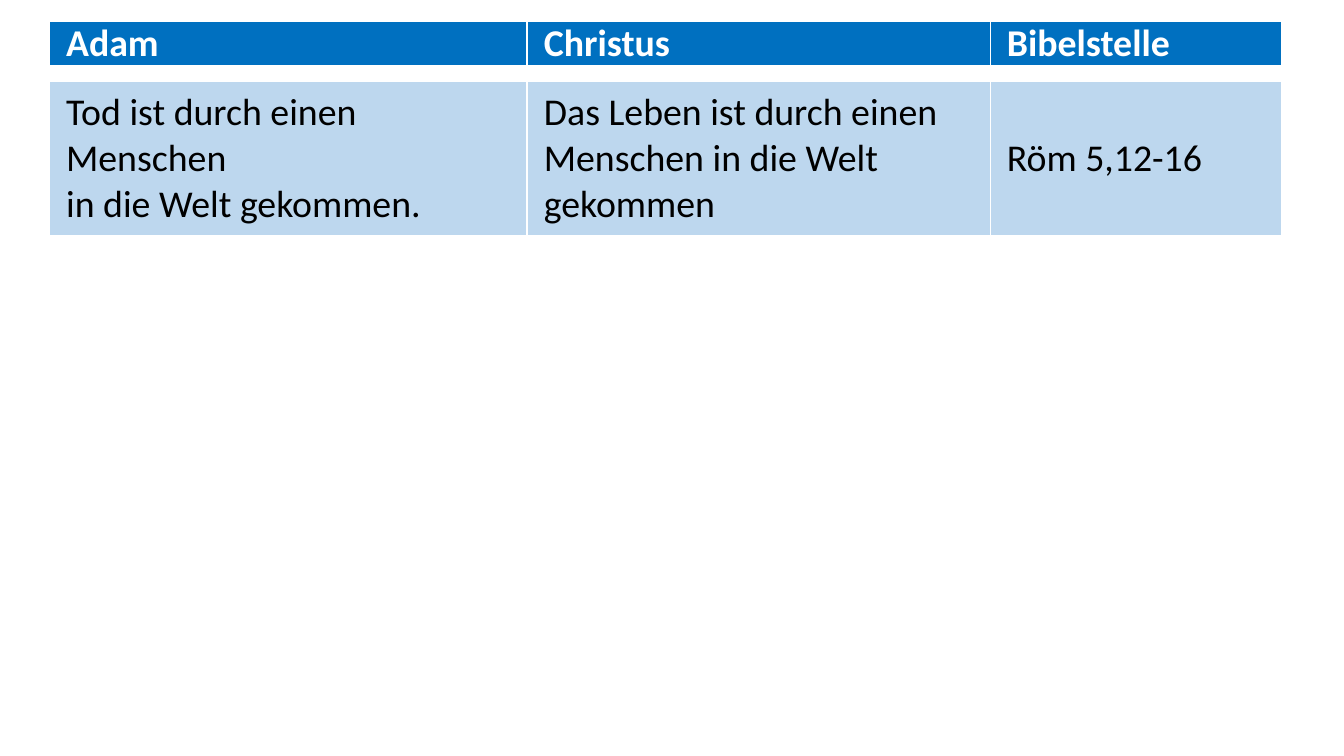
import pptx
import pptx.util
import pptx.dml.color
import pptx.enum.text
import pptx.oxml
import pptx.oxml.ns

PX = 9525
WHITE, BLACK, BLUE, PALE_BLUE = "FFFFFF", "000000", "0070C0", "BDD7EE"


def colour(value):
    return pptx.dml.color.RGBColor.from_string(value)


def add_borders(cell, bottom_points):
    properties = cell._tc.get_or_add_tcPr()
    sides = [("lnL", 1), ("lnR", 1), ("lnT", 1), ("lnB", bottom_points)]
    for position, (side, points) in enumerate(sides):
        line = pptx.oxml.parse_xml(
            f'<a:{side} {pptx.oxml.ns.nsdecls("a")} w="{points * 12700}">'
            f'<a:solidFill><a:srgbClr val="{WHITE}"/></a:solidFill></a:{side}>')
        properties.insert(position, line)


deck = pptx.Presentation()
deck.slide_width, deck.slide_height = 1280 * PX, 720 * PX
page = deck.slides.add_slide(deck.slide_layouts[6])

column_widths = [455, 441, 278]
rows = [
    (43, BLUE, WHITE, 27, True, 3, ["Adam", "Christus", "Bibelstelle"]),
    (14, WHITE, BLACK, 8, False, 1, ["", "", ""]),
    (147, PALE_BLUE, BLACK, 27, False, 1, [
        "Tod ist durch einen Menschen\nin die Welt gekommen.",
        "Das Leben ist durch einen\nMenschen in die Welt gekommen",
        "Röm 5,12-16",
    ]),
]

frame = page.shapes.add_table(len(rows), len(column_widths), 47 * PX, 20 * PX,
                              sum(column_widths) * PX, sum(row[0] for row in rows) * PX)
comparison = frame.table
for column, width in zip(comparison.columns, column_widths):
    column.width = width * PX

for row, (height, fill, ink, size, bold, bottom_points, texts) in zip(comparison.rows, rows):
    row.height = height * PX
    for cell, text in zip(row.cells, texts):
        cell.margin_left = cell.margin_right = 16 * PX
        cell.margin_top = cell.margin_bottom = 0
        if fill == PALE_BLUE:
            cell.vertical_anchor = pptx.enum.text.MSO_ANCHOR.MIDDLE
        cell.fill.solid()
        cell.fill.fore_color.rgb = colour(fill)
        add_borders(cell, bottom_points)
        cell.text = text
        for para in cell.text_frame.paragraphs:
            para.font.name = "Calibri"
            para.font.size = pptx.util.Pt(size)
            para.font.bold = bold
            para.font.color.rgb = colour(ink)
            if not text:
                para._p.append(pptx.oxml.parse_xml(
                    f'<a:endParaRPr {pptx.oxml.ns.nsdecls("a")} sz="{size * 100}"/>'))

deck.save("out.pptx")
